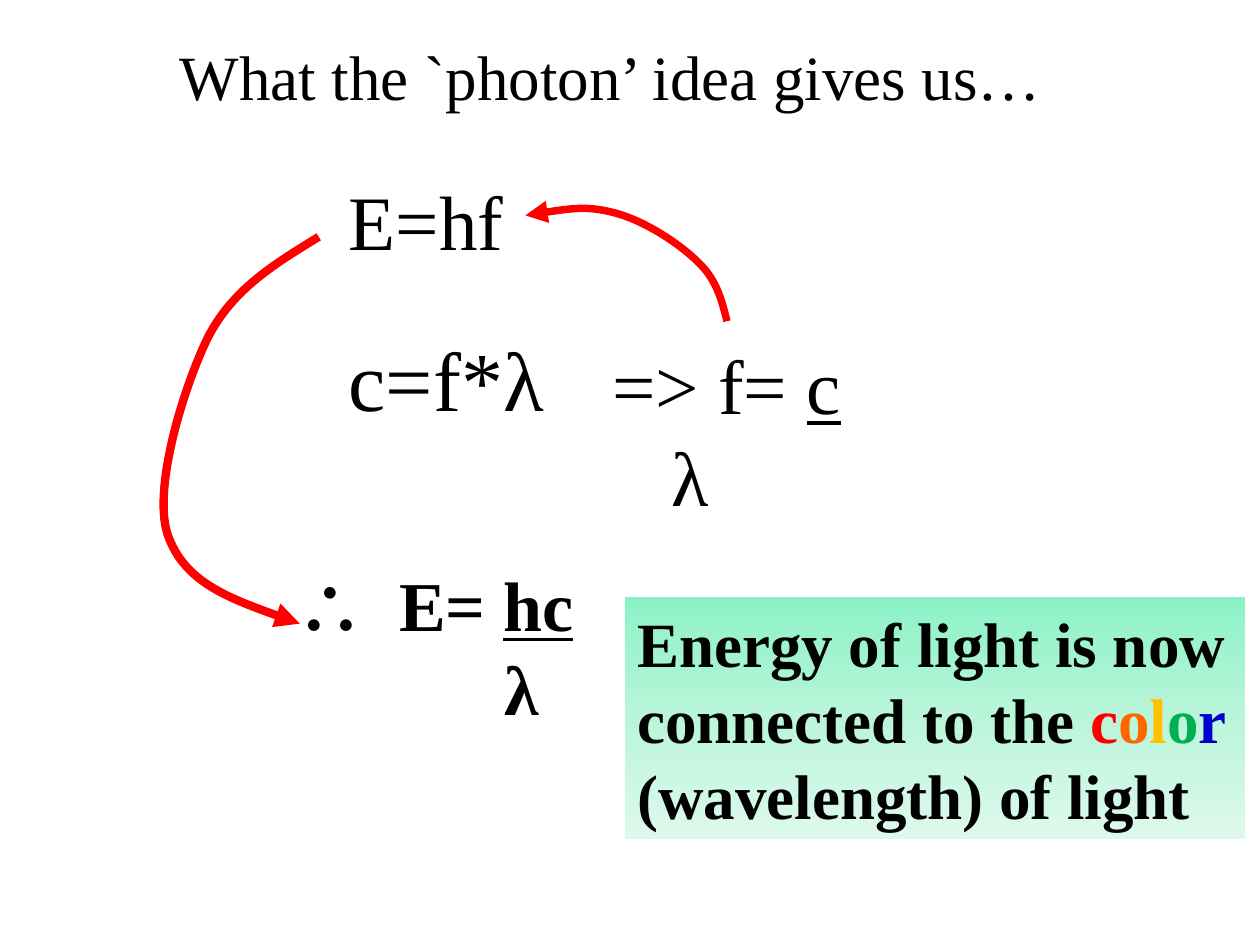
"""Build the slide on what the photon idea gives us."""
import copy
from pptx import Presentation
from pptx import util as u
from pptx.dml.color import RGBColor
from pptx.enum import shapes, text
from pptx.oxml import ns
from lxml import etree

BLACK = RGBColor(0x00, 0x00, 0x00)
RED = RGBColor(0xFF, 0x00, 0x00)
ORANGE = RGBColor(0xFF, 0x66, 0x00)
AMBER = RGBColor(0xFF, 0xC0, 0x00)
GREEN = RGBColor(0x00, 0xB0, 0x50)
BLUE = RGBColor(0x00, 0x00, 0xCC)
MINTS = [(0, RGBColor(0x8C, 0xF2, 0xC6)),
         (0.5, RGBColor(0xBA, 0xF5, 0xDA)),
         (1, RGBColor(0xDE, 0xF9, 0xEC))]


class SlideBuilder:
    def __init__(self, s, font="Times New Roman"):
        self.s = s
        self.font = font

    def add_text(self, sp, paragraphs, size, bold=False):
        tf = sp.text_frame
        tf.word_wrap = True
        for i, (indent, runs) in enumerate(paragraphs):
            p = tf.add_paragraph() if i else tf.paragraphs[0]
            p.alignment = text.PP_ALIGN.LEFT
            if indent:
                p._p.get_or_add_pPr().set("marL", str(u.Inches(indent)))
            for words, color, underline in runs:
                r = p.add_run()
                r.text = words
                r.font.name = self.font
                r.font.size = u.Pt(size)
                r.font.bold = bold
                r.font.underline = underline
                r.font.color.rgb = color
        return tf

    def textbox(self, box, paragraphs, size, bold=False):
        sp = self.s.shapes.add_textbox(*map(u.Inches, box))
        return self.add_text(sp, paragraphs, size, bold)

    def tab_stop(self, p, position):
        tabs = etree.SubElement(p._p.get_or_add_pPr(), ns.qn("a:tabLst"))
        etree.SubElement(tabs, ns.qn("a:tab"), pos=str(u.Inches(position)), algn="l")

    def gradient_box(self, box, stops, paragraphs, size):
        sp = self.s.shapes.add_shape(shapes.MSO_SHAPE.RECTANGLE, *map(u.Inches, box))
        sp.shadow.inherit = False
        sp.line.fill.background()
        sp.fill.gradient()
        sp.fill.gradient_angle = 270
        gs_list = sp._element.spPr.find(".//" + ns.qn("a:gsLst"))
        gs_list.insert(1, copy.deepcopy(gs_list[0]))
        for stop, (position, color) in zip(sp.fill.gradient_stops, stops):
            stop.position = position
            stop.color.rgb = color
        self.add_text(sp, paragraphs, size, bold=True)
        sp.text_frame.vertical_anchor = text.MSO_ANCHOR.MIDDLE

    def curved_arrow(self, start, curves, width, color=RED):
        builder = self.s.shapes.build_freeform(*map(u.Inches, start))
        ends = [tuple(map(u.Inches, curve[-1])) for curve in curves]
        builder.add_line_segments(ends, close=False)
        sp = builder.convert_to_shape()
        sp.shadow.inherit = False
        sp.fill.background()
        sp.line.color.rgb = color
        sp.line.width = u.Pt(width)
        outline = sp._element.spPr.find(".//" + ns.qn("a:path"))
        for segment, curve in zip(outline.findall(ns.qn("a:lnTo")), curves):
            bezier = etree.Element(ns.qn("a:cubicBezTo"))
            for x, y in curve:
                etree.SubElement(bezier, ns.qn("a:pt"),
                                 x=str(u.Inches(x) - sp.left),
                                 y=str(u.Inches(y) - sp.top))
            outline.replace(segment, bezier)
        ln = sp._element.spPr.find(ns.qn("a:ln"))
        etree.SubElement(ln, ns.qn("a:tailEnd"), type="triangle")


def plain(words, color=BLACK):
    return words, color, False


def underlined(words):
    return words, BLACK, True


def main():
    prs = Presentation()
    prs.slide_width, prs.slide_height = u.Inches(10), u.Inches(7.5)
    b = SlideBuilder(prs.slides.add_slide(prs.slide_layouts[6]))

    b.textbox((2.67, 1.33, 4.75, 1.58), [(0, [plain("E=hf")])], 44)
    tf = b.textbox((2.25, 4.41, 5, 1.45),
                   [(0, [plain("∴\tE= "), underlined("hc")]),
                    (1.66, [plain("λ")])], 40, bold=True)
    b.tab_stop(tf.paragraphs[0], 0.82)
    b.textbox((1.33, 0.25, 8.25, 0.71),
              [(0, [plain("What the `photon’ idea gives us…")])], 36)
    b.textbox((2.67, 2.55, 2.54, 0.91), [(0, [plain("c=f*λ")])], 48)
    b.textbox((4.76, 2.63, 3.5, 1.58),
              [(0, [plain("=> f= "), underlined("c")]),
               (0.47, [plain("λ")])], 44)

    b.curved_arrow((5.77, 2.55),
                   [[(5.73, 2.39), (5.69, 2.22), (5.54, 2.08)],
                    [(5.39, 1.93), (5.11, 1.75), (4.88, 1.69)],
                    [(4.66, 1.63), (4.41, 1.67), (4.17, 1.71)]], 4.25)
    b.curved_arrow((2.53, 1.88),
                   [[(2.19, 2.09), (1.85, 2.29), (1.65, 2.68)],
                    [(1.46, 3.07), (1.21, 3.87), (1.33, 4.24)],
                    [(1.46, 4.62), (1.92, 4.79), (2.38, 4.95)]], 4.75)

    rainbow = zip("color", (RED, ORANGE, AMBER, GREEN, BLUE))
    b.gradient_box((4.96, 4.74, 4.92, 1.92), MINTS,
                   [(0, [plain("Energy of light is now connected to the "),
                         *(plain(letter, color) for letter, color in rainbow),
                         plain(" (wavelength) of light")])], 36)
    prs.save("out.pptx")


if __name__ == "__main__":
    main()
